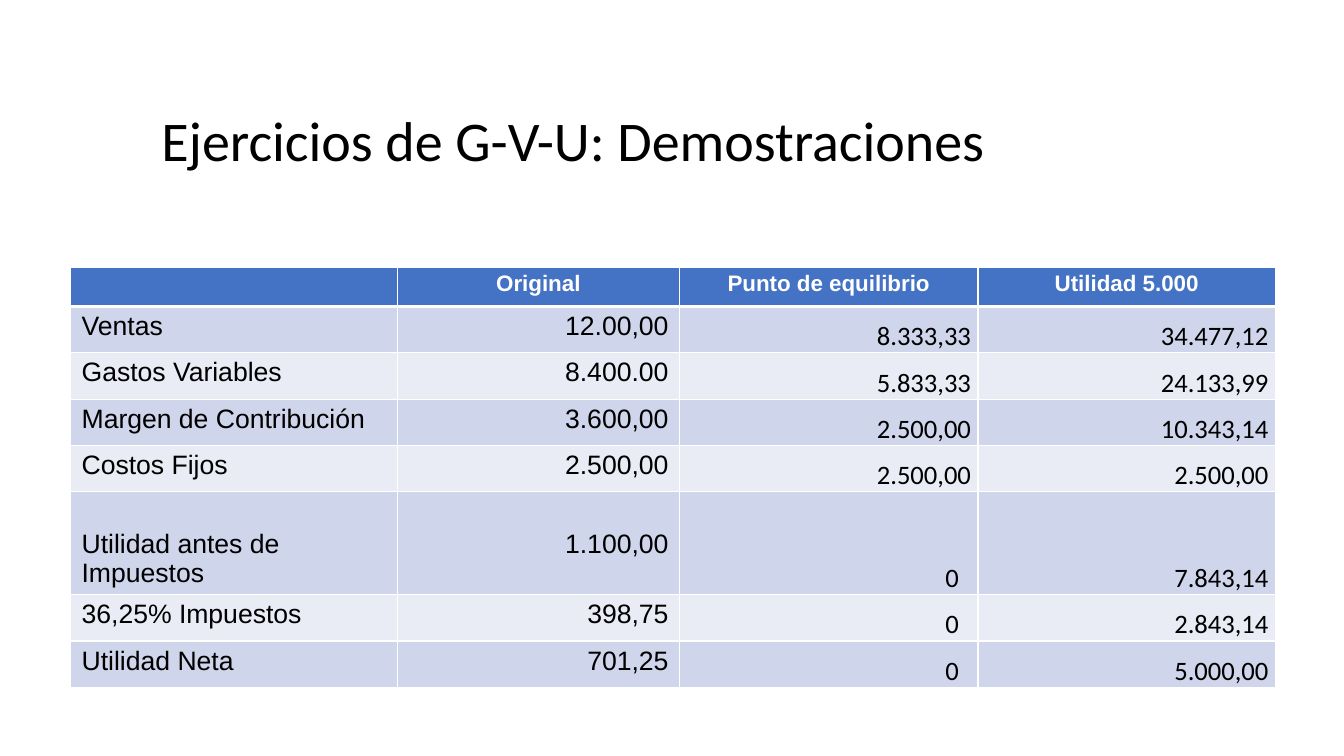
from lxml import etree
from pptx import Presentation
from pptx.dml.color import RGBColor
from pptx.enum.text import MSO_ANCHOR, PP_ALIGN
from pptx.oxml.ns import qn
from pptx.util import Pt

EMU_PER_PX = 9144
LEFT, CENTER, RIGHT = PP_ALIGN.LEFT, PP_ALIGN.CENTER, PP_ALIGN.RIGHT
TOP, MIDDLE, BOTTOM = MSO_ANCHOR.TOP, MSO_ANCHOR.MIDDLE, MSO_ANCHOR.BOTTOM

COLORS = {
    "text": "000000",
    "header_text": "FFFFFF",
    "border": "FFFFFF",
    "header": "4472C4",
    "odd_row": "CFD5EA",
    "even_row": "E9EBF5",
}

HEADINGS = ["", "Original", "Punto de equilibrio", "Utilidad 5.000"]
INCOME_LINES = [
    ["Ventas", "12.00,00", "8.333,33", "34.477,12"],
    ["Gastos Variables", "8.400.00", "5.833,33", "24.133,99"],
    ["Margen de Contribución", "3.600,00", "2.500,00", "10.343,14"],
    ["Costos Fijos", "2.500,00", "2.500,00", "2.500,00"],
    ["Utilidad antes de Impuestos", "1.100,00", "0", "7.843,14"],
    ["36,25% Impuestos", "398,75", "0", "2.843,14"],
    ["Utilidad Neta", "701,25", "0", "5.000,00"],
]
PRE_TAX_ROW = 5
COLUMN_WIDTHS = [324, 280, 296, 295]
HEADER_HEIGHT, ROW_HEIGHT, PRE_TAX_HEIGHT = 39, 46, 102


def px(length):
    return length * EMU_PER_PX


def format_text(frame, font, size, color, align, bold=False):
    for paragraph in frame.paragraphs:
        paragraph.alignment = align
        for run in paragraph.runs:
            run.font.name = font
            run.font.size = Pt(size)
            run.font.bold = bold
            run.font.color.rgb = RGBColor.from_string(COLORS[color])


def set_borders(cell, top=1, bottom=1):
    """Draw the four cell edges; top and bottom are widths in points."""
    properties = cell._tc.get_or_add_tcPr()
    for edge, width in (("L", 1), ("R", 1), ("T", top), ("B", bottom)):
        line = etree.SubElement(properties, qn(f"a:ln{edge}"), w=str(Pt(width)))
        fill = etree.SubElement(line, qn("a:solidFill"))
        etree.SubElement(fill, qn("a:srgbClr"), val=COLORS["border"])


def set_cell(cell, text, fill, margins, anchor):
    """Fill a cell; margins are left, top, right and bottom in px."""
    cell.text_frame.text = text
    cell.vertical_anchor = anchor
    (cell.margin_left, cell.margin_top,
     cell.margin_right, cell.margin_bottom) = map(px, margins)
    cell.fill.solid()
    cell.fill.fore_color.rgb = RGBColor.from_string(COLORS[fill])


def add_title(slide, text):
    title = slide.shapes.title
    title.left, title.top, title.width, title.height = map(px, (150, 94, 1098, 96))
    frame = title.text_frame
    frame.text = text
    frame.vertical_anchor = MIDDLE
    frame.paragraphs[0].line_spacing = 0.9
    format_text(frame, "Calibri", 40, "text", LEFT)


def fill_header(table):
    for column, heading in enumerate(HEADINGS):
        cell = table.cell(0, column)
        set_borders(cell, bottom=3)
        set_cell(cell, heading, "header", (9, 4, 9, 4), TOP)
        format_text(cell.text_frame, "Arial", 16, "header_text", CENTER, True)


def fill_income_line(table, row, values):
    fill = "odd_row" if row % 2 else "even_row"
    for column, value in enumerate(values):
        cell = table.cell(row, column)
        set_borders(cell, top=3 if row == 1 else 1)
        if column < 2:
            top_margin = 37 if row == PRE_TAX_ROW else 5
            set_cell(cell, value, fill, (11, top_margin, 11, 5), TOP)
            font = "Arial"
        else:
            right_margin = 19 if value == "0" else 7
            set_cell(cell, value, fill, (1, 1, right_margin, 0), BOTTOM)
            font = "Calibri"
        format_text(cell.text_frame, font, 19, "text", RIGHT if column else LEFT)


def add_income_table(slide):
    heights = [HEADER_HEIGHT] + [ROW_HEIGHT] * len(INCOME_LINES)
    heights[PRE_TAX_ROW] = PRE_TAX_HEIGHT
    table = slide.shapes.add_table(
        len(heights), len(HEADINGS), px(70), px(265),
        px(sum(COLUMN_WIDTHS)), px(sum(heights))).table
    for column, width in zip(table.columns, COLUMN_WIDTHS):
        column.width = px(width)
    for row, height in zip(table.rows, heights):
        row.height = px(height)
    fill_header(table)
    for row, values in enumerate(INCOME_LINES, start=1):
        fill_income_line(table, row, values)


def main():
    presentation = Presentation()
    presentation.slide_width = px(1333)
    presentation.slide_height = px(750)
    slide = presentation.slides.add_slide(presentation.slide_layouts[5])
    add_title(slide, "Ejercicios de G-V-U: Demostraciones")
    add_income_table(slide)
    presentation.save("out.pptx")


if __name__ == "__main__":
    main()
